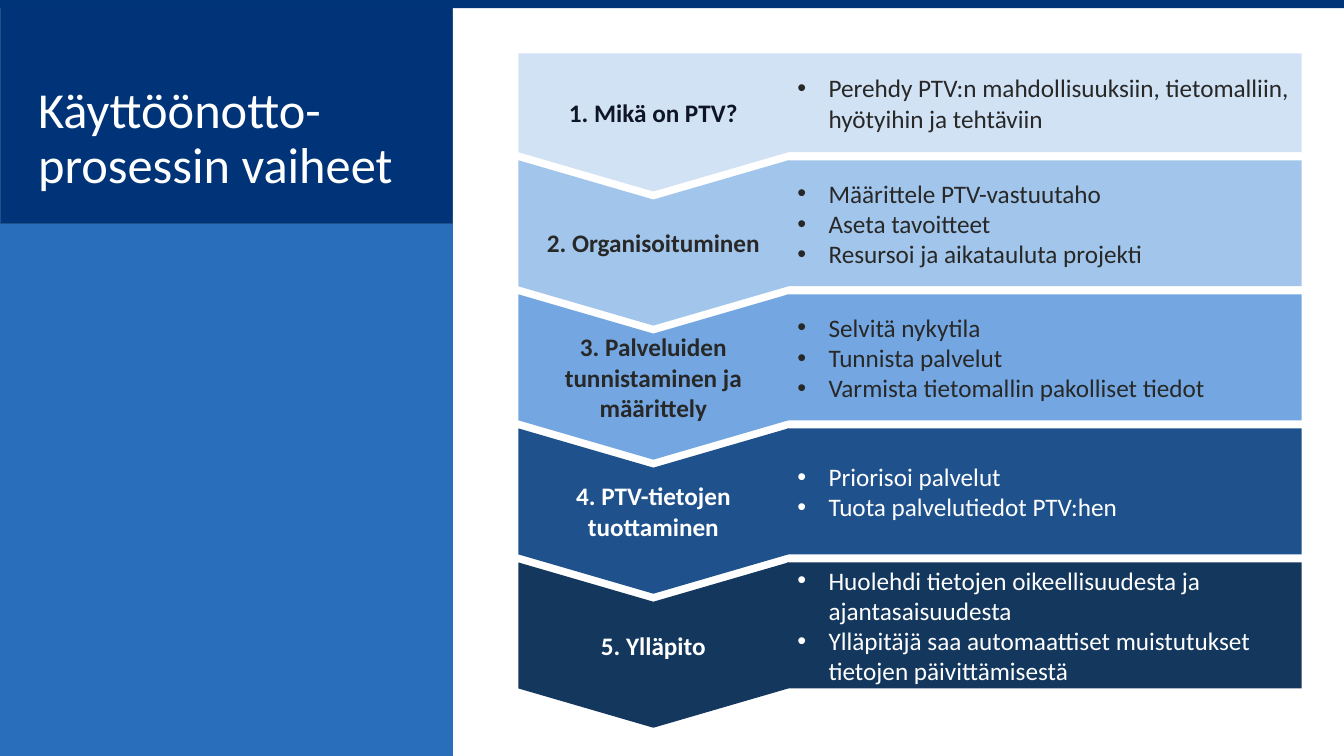
from lxml import etree
from pptx import Presentation
from pptx.dml.color import RGBColor
from pptx.enum.shapes import MSO_CONNECTOR as CONN, MSO_SHAPE as SHAPE
from pptx.enum.text import MSO_ANCHOR as ANCHOR, PP_ALIGN as ALIGN
from pptx.oxml.ns import qn
from pptx.util import Inches, Pt

W, H = 13.33, 7.5
PANEL_W, TITLE_H = 4.49, 2.22
GAP, TIP, LABEL_W, INDENT = 0.08, 0.39, 2.68, 0.31
DARK, WHITE = "272827", "FFFFFF"

# label, bullets, fill, label colour, bullet colour, row height
STEPS = [
    ("1. Mikä on PTV?",
     ["Perehdy PTV:n mahdollisuuksiin, tietomalliin, hyötyihin ja tehtäviin"],
     "D1E2F5", "0E1526", DARK, 0.98),
    ("2. Organisoituminen",
     ["Määrittele PTV-vastuutaho", "Aseta tavoitteet",
      "Resursoi ja aikatauluta projekti"],
     "A2C5EB", DARK, DARK, 1.25),
    ("3. Palveluiden tunnistaminen ja määrittely",
     ["Selvitä nykytila", "Tunnista palvelut",
      "Varmista tietomallin pakolliset tiedot"],
     "74A7E1", DARK, DARK, 1.25),
    ("4. PTV-tietojen tuottaminen",
     ["Priorisoi palvelut", "Tuota palvelutiedot PTV:hen"],
     "1F528C", WHITE, WHITE, 1.25),
    ("5. Ylläpito",
     ["Huolehdi tietojen oikeellisuudesta ja ajantasaisuudesta",
      "Ylläpitäjä saa automaattiset muistutukset tietojen päivittämisestä"],
     "14375E", WHITE, WHITE, 1.25),
]


def color(value):
    return RGBColor.from_string(value)


def add_box(s, x, y, w, h, fill, line=None, kind=SHAPE.RECTANGLE):
    sp = s.shapes.add_shape(kind, Inches(x), Inches(y), Inches(w), Inches(h))
    sp.shadow.inherit = False
    sp.fill.solid()
    sp.fill.fore_color.rgb = color(fill)
    if line:
        sp.line.color.rgb = color(line)
        sp.line.width = Pt(1)
    else:
        sp.line.fill.background()
    return sp


def write(sp, lines, size=18, ink=WHITE, bold=False, align=ALIGN.LEFT,
          bullet=False, spacing=None):
    tf = sp.text_frame
    tf.word_wrap = True
    tf.vertical_anchor = ANCHOR.MIDDLE
    for i, text in enumerate(lines):
        p = tf.add_paragraph() if i else tf.paragraphs[0]
        p.alignment = align
        if spacing:
            p.line_spacing = spacing
        if bullet:
            pPr = p._p.get_or_add_pPr()
            pPr.set("marL", str(Inches(INDENT)))
            pPr.set("indent", str(-Inches(INDENT)))
            etree.SubElement(pPr, qn("a:buFont")).set("typeface", "Arial")
            etree.SubElement(pPr, qn("a:buChar")).set("char", "•")
        r = p.add_run()
        r.text = text
        r.font.name, r.font.size, r.font.bold = "Calibri", Pt(size), bold
        r.font.color.rgb = color(ink)


def add_side_panel(s, w, title_h):
    add_box(s, 0, title_h, w, H - title_h, "296EBB", "296EBB")
    rule = s.shapes.add_connector(CONN.STRAIGHT, 0, Inches(title_h),
                                  Inches(w + 0.04), Inches(title_h))
    rule.line.color.rgb = color(WHITE)
    rule.line.width = Pt(1)
    etree.SubElement(rule._element.spPr, qn("a:effectLst"))
    add_box(s, 0, 0, w, title_h, "003378", "1E518A")
    add_box(s, 0, 0, W, 0.08, "003479")
    title = s.shapes.add_textbox(Inches(0.28), Inches(0.5),
                                 Inches(3.98), Inches(1.77))
    write(title, ["Käyttöönotto-prosessin vaiheet"], size=36, spacing=0.9)


def add_label(s, x, y, w, h, text, fill, ink, kind):
    # Turned a quarter so that the arrow points down; the text stays level
    sp = add_box(s, x + (w - h) / 2, y + (h - w) / 2, h, w, fill, kind=kind)
    sp.rotation = 90
    sp.adjustments[0] = TIP / h
    write(sp, [text], ink=ink, bold=True, align=ALIGN.CENTER)
    sp.text_frame._txBody.bodyPr.set("vert", "vert270")


def add_steps(s, x, y, w):
    tops = [y + sum(step[-1] + GAP for step in STEPS[:i])
            for i in range(len(STEPS))]
    # Arrow labels
    for i, (label, _, fill, ink, _, h) in enumerate(STEPS):
        kind = SHAPE.CHEVRON if i else SHAPE.PENTAGON
        add_label(s, x, tops[i], LABEL_W, h + TIP, label, fill, ink, kind)
    # Bullet bars
    for top, (_, bullets, fill, _, ink, h) in zip(tops, STEPS):
        bar = add_box(s, x + LABEL_W - 0.01, top, w - LABEL_W + 0.01, h, fill)
        write(bar, bullets, ink=ink, bullet=True)


def main():
    prs = Presentation()
    prs.slide_width, prs.slide_height = Inches(W), Inches(H)
    s = prs.slides.add_slide(prs.slide_layouts[6])
    add_side_panel(s, PANEL_W, TITLE_H)
    add_steps(s, 5.14, 0.53, 7.77)
    prs.save("out.pptx")


if __name__ == "__main__":
    main()
